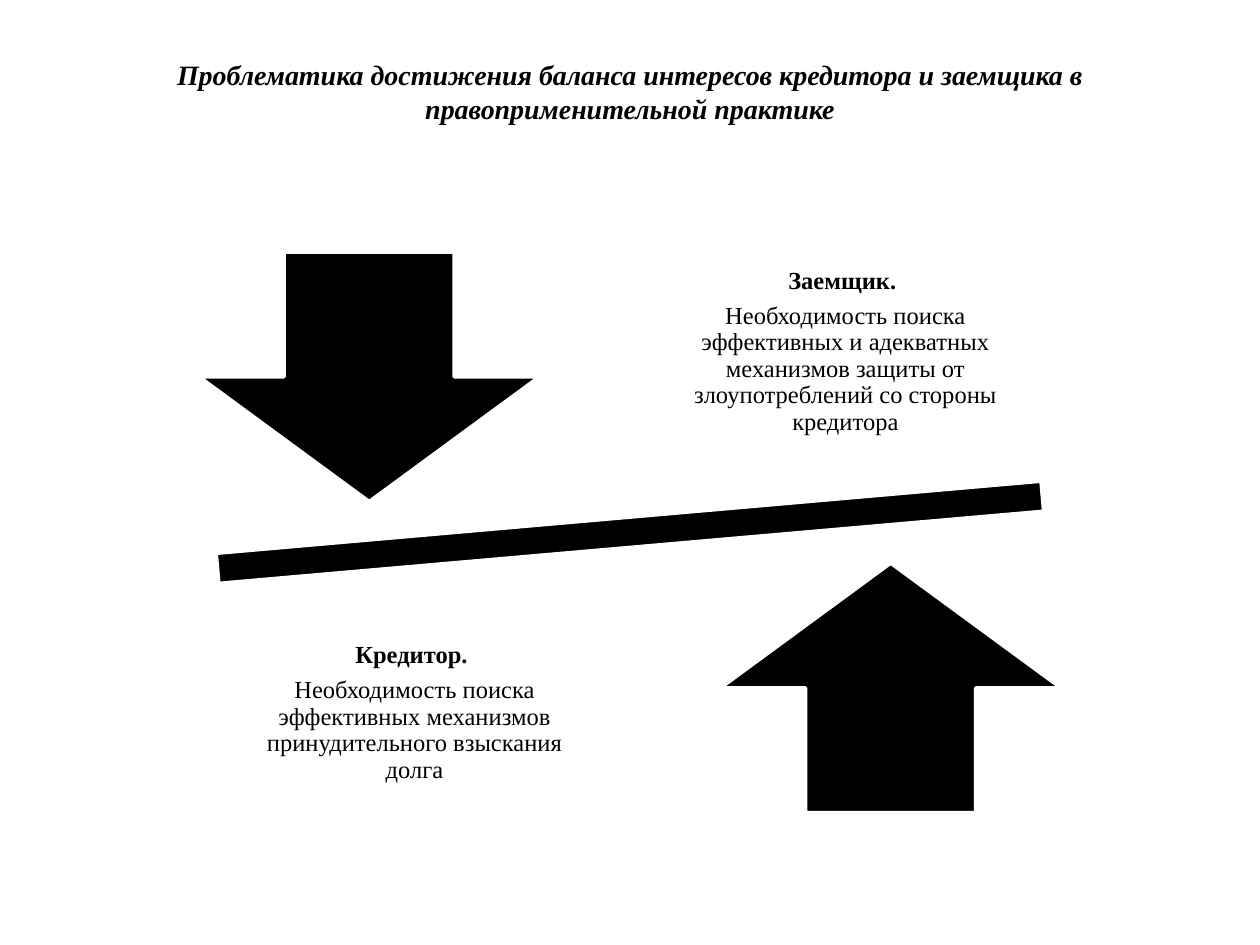
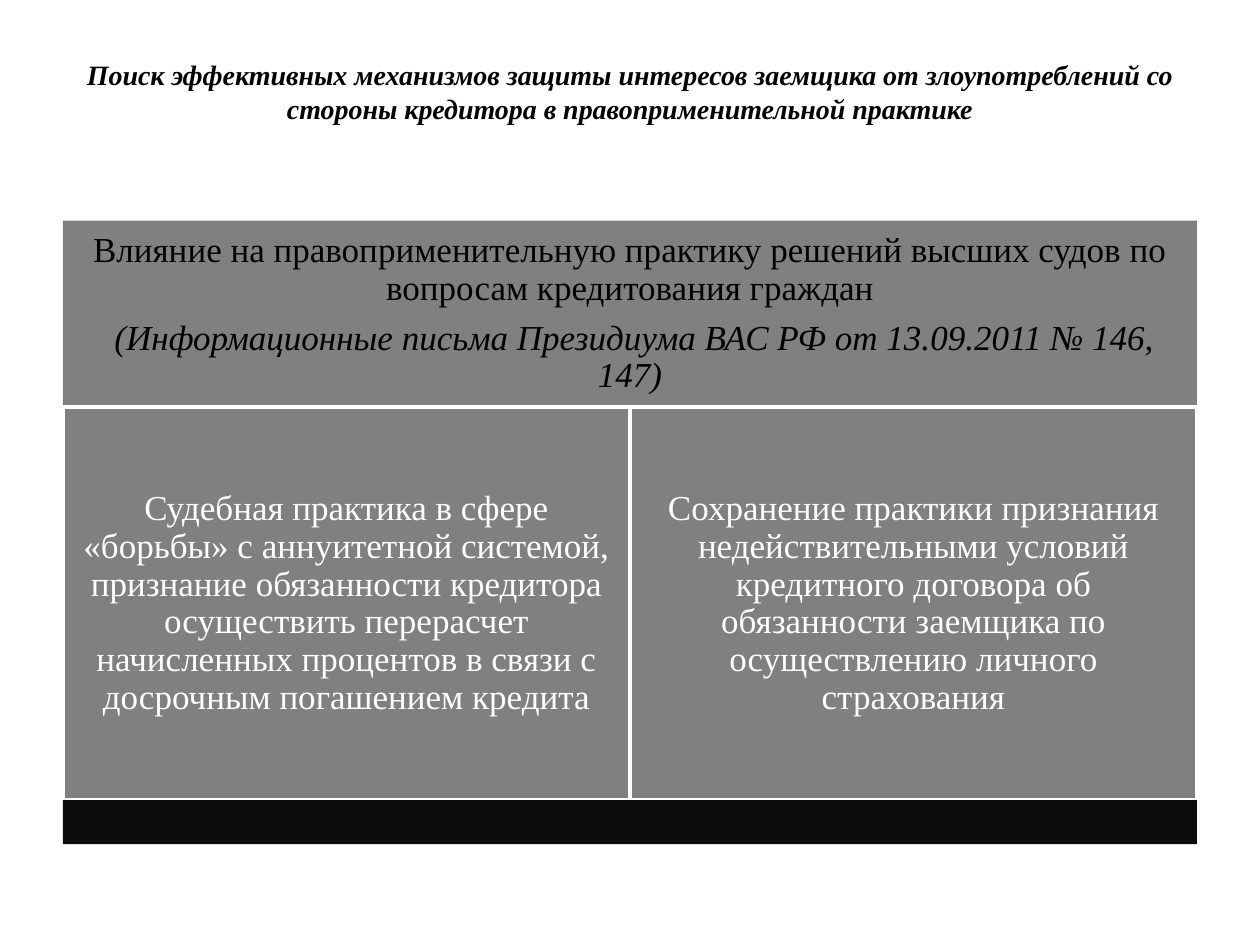
from pptx import Presentation
from pptx.dml.color import RGBColor
from pptx.enum.shapes import MSO_SHAPE
from pptx.enum.text import MSO_ANCHOR, PP_ALIGN
from pptx.util import Pt

BLACK = RGBColor(0, 0, 0)
WHITE = RGBColor(255, 255, 255)
GRAY = RGBColor(128, 128, 128)
NEAR_BLACK = RGBColor(13, 13, 13)
FONT = "Times New Roman"

SLIDE_WIDTH, SLIDE_HEIGHT = 720, 540
MARGIN = 36
CONTENT_WIDTH = SLIDE_WIDTH - 2 * MARGIN

BALANCE_TITLE = "Проблематика достижения баланса интересов кредитора и заемщика в правоприменительной практике"
BORROWER = [
    ("Заемщик. ", {"bold": True}),
    ("Необходимость поиска эффективных и адекватных механизмов защиты от злоупотреблений со стороны кредитора", {}),
]
LENDER = [
    ("Кредитор. ", {"bold": True}),
    ("Необходимость поиска эффективных механизмов принудительного взыскания долга", {}),
]

PROTECTION_TITLE = "Поиск эффективных механизмов защиты интересов заемщика от злоупотреблений со стороны кредитора в правоприменительной практике"
COURT_INFLUENCE = [
    ("Влияние на правоприменительную практику решений высших судов по вопросам кредитования граждан", {}),
    (" (Информационные письма Президиума ВАС РФ от 13.09.2011 № 146, 147)", {"italic": True}),
]
PRACTICES = [
    "Судебная практика в сфере «борьбы» с аннуитетной системой, признание обязанности кредитора осуществить перерасчет начисленных процентов в связи с досрочным погашением кредита",
    "Сохранение практики признания недействительными условий кредитного договора об обязанности заемщика по осуществлению личного страхования",
]

PIVOT_X, PIVOT_Y = SLIDE_WIDTH / 2, 304.2
BEAM_WIDTH, BEAM_HEIGHT = 643.7, 73.4
ARROW_BOX = (113.8, 144, 194.4, 142.6)
SIDE_TEXT_BOX = (379.4, 126, 207.4, 149.8)

HEADER_TOP, HEADER_HEIGHT = 126, 106.6
PRACTICE_HEIGHT = 224.6
FOOTER_HEIGHT = 25.2


def write_text(shape, paragraphs, size, color=BLACK, inset=None, line_spacing=None, space_after=0):
    frame = shape.text_frame
    frame.word_wrap = True
    frame.vertical_anchor = MSO_ANCHOR.MIDDLE
    if inset is not None:
        frame.margin_left = frame.margin_right = Pt(inset)
        frame.margin_top = frame.margin_bottom = Pt(inset)
    for index, (text, style) in enumerate(paragraphs):
        paragraph = frame.add_paragraph() if index else frame.paragraphs[0]
        paragraph.alignment = PP_ALIGN.CENTER
        paragraph.line_spacing = line_spacing
        paragraph.space_after = Pt(space_after)
        run = paragraph.add_run()
        run.text = text
        run.font.name = FONT
        run.font.size = Pt(size)
        run.font.color.rgb = color
        run.font.bold = style.get("bold", False)
        run.font.italic = style.get("italic", False)


def add_text(slide, box, paragraphs, **text_format):
    shape = slide.shapes.add_textbox(*map(Pt, box))
    write_text(shape, paragraphs, **text_format)


def add_figure(slide, kind, box, fill, outlined=True):
    shape = slide.shapes.add_shape(kind, *map(Pt, box))
    shape.shadow.inherit = False
    shape.fill.solid()
    shape.fill.fore_color.rgb = fill
    if outlined:
        shape.line.color.rgb = WHITE
        shape.line.width = Pt(2)
    else:
        shape.line.fill.background()
    return shape


def add_titled_slide(presentation, title):
    slide = presentation.slides.add_slide(presentation.slide_layouts[6])
    add_text(slide, (MARGIN, 21.6, CONTENT_WIDTH, 61.2),
             [(title, {"bold": True, "italic": True})], size=16)
    return slide


def opposite(box):
    left, top, width, height = box
    return 2 * PIVOT_X - left - width, 2 * PIVOT_Y - top - height, width, height


def build_balance_slide(presentation):
    slide = add_titled_slide(presentation, BALANCE_TITLE)
    beam_box = (PIVOT_X - BEAM_WIDTH / 2, PIVOT_Y - BEAM_HEIGHT / 2, BEAM_WIDTH, BEAM_HEIGHT)
    beam = add_figure(slide, MSO_SHAPE.MATH_MINUS, beam_box, BLACK)
    beam.rotation = 355
    sides = [
        (MSO_SHAPE.DOWN_ARROW, ARROW_BOX, BORROWER, SIDE_TEXT_BOX),
        (MSO_SHAPE.UP_ARROW, opposite(ARROW_BOX), LENDER, opposite(SIDE_TEXT_BOX)),
    ]
    for arrow, arrow_box, paragraphs, text_box in sides:
        add_figure(slide, arrow, arrow_box, BLACK)
        add_text(slide, text_box, paragraphs, size=14, inset=7.9, line_spacing=0.9, space_after=4.9)


def build_protection_slide(presentation):
    slide = add_titled_slide(presentation, PROTECTION_TITLE)
    panel_format = {"size": 20, "inset": 5.8, "line_spacing": 0.9, "space_after": 7}
    header = add_figure(slide, MSO_SHAPE.RECTANGLE,
                        (MARGIN, HEADER_TOP, CONTENT_WIDTH, HEADER_HEIGHT), GRAY, outlined=False)
    write_text(header, COURT_INFLUENCE, **panel_format)

    practice_top = HEADER_TOP + HEADER_HEIGHT
    practice_width = CONTENT_WIDTH / len(PRACTICES)
    for column, text in enumerate(PRACTICES):
        box = (MARGIN + column * practice_width, practice_top, practice_width, PRACTICE_HEIGHT)
        panel = add_figure(slide, MSO_SHAPE.RECTANGLE, box, GRAY)
        write_text(panel, [(text, {})], color=WHITE, **panel_format)

    footer_box = (MARGIN, practice_top + PRACTICE_HEIGHT, CONTENT_WIDTH, FOOTER_HEIGHT)
    add_figure(slide, MSO_SHAPE.RECTANGLE, footer_box, NEAR_BLACK, outlined=False)


def main():
    presentation = Presentation()
    presentation.slide_width = Pt(SLIDE_WIDTH)
    presentation.slide_height = Pt(SLIDE_HEIGHT)
    build_balance_slide(presentation)
    build_protection_slide(presentation)
    presentation.save("out.pptx")


if __name__ == "__main__":
    main()
